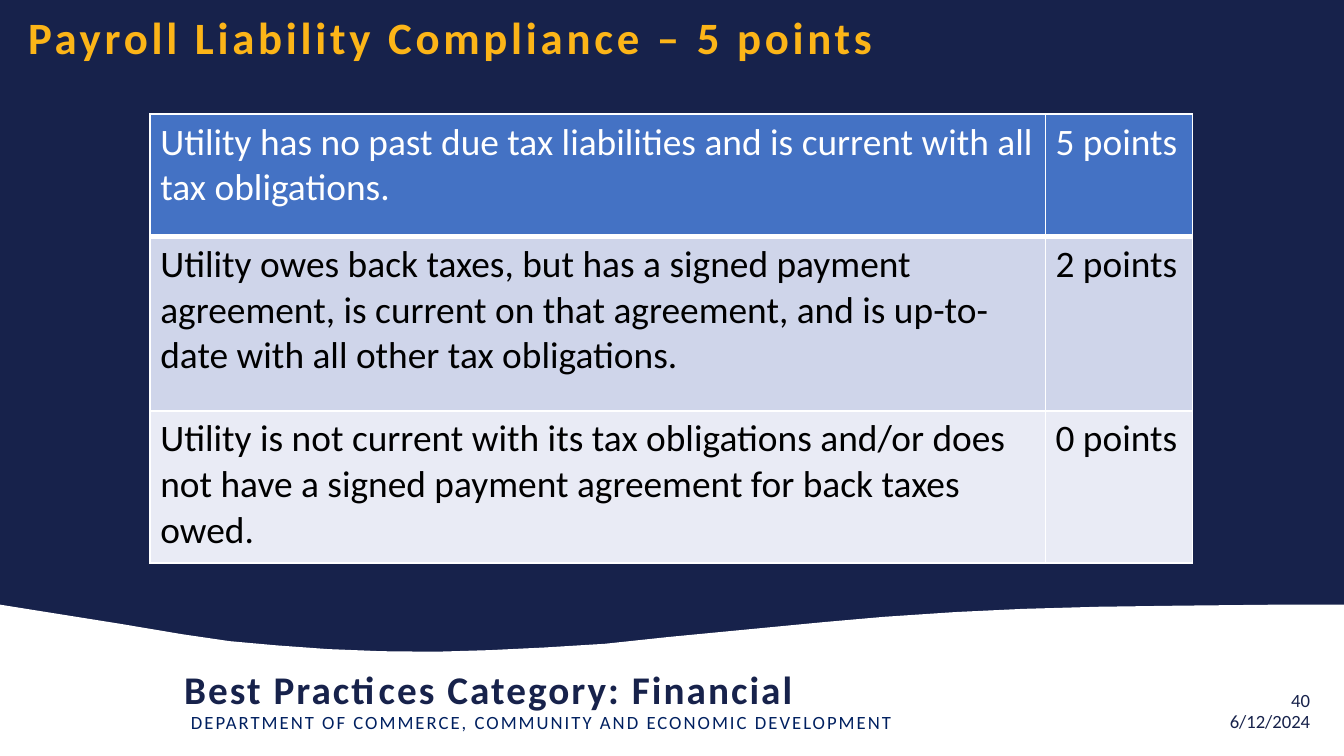
from pptx import Presentation
from pptx.dml.color import RGBColor
from pptx.enum import shapes, text
from pptx.oxml import parse_xml
from pptx.oxml.ns import nsdecls
from pptx.util import Cm, Pt

NAVY = RGBColor(0x17, 0x22, 0x4B)
DEEP_BLUE = RGBColor(0x00, 0x20, 0x60)
GOLD = RGBColor(0xFC, 0xB5, 0x18)
WHITE = RGBColor(0xFF, 0xFF, 0xFF)
BLACK = RGBColor(0x00, 0x00, 0x00)
HEADER_BLUE = RGBColor(0x44, 0x72, 0xC4)
BAND_DARK = RGBColor(0xCF, 0xD5, 0xEA)
BAND_LIGHT = RGBColor(0xE9, 0xEB, 0xF5)
FONT = "Calibri"
LEFT, RIGHT = text.PP_ALIGN.LEFT, text.PP_ALIGN.RIGHT

# Content; lengths in centimetres
WIDTH, HEIGHT = 25.4, 14.29
TITLE = "Payroll Liability Compliance – 5 points"
# text, (left, top, width, height), size, colour, bold, letter spacing, alignment
FOOTERS = [
    ("DEPARTMENT OF COMMERCE, COMMUNITY AND ECONOMIC DEVELOPMENT",
     (3.61, 13.44, 15.5, 0.43), 10, DEEP_BLUE, False, 1.1, LEFT),
    ("40", (18.92, 13.03, 5.84, 0.43), 10, NAVY, False, 0, RIGHT),
    ("Best Practices Category: Financial",
     (3.48, 12.57, 15.88, 0.89), 21, NAVY, True, 1.1, LEFT),
    ("6/12/2024", (22.63, 13.41, 2.13, 0.43), 10, NAVY, False, 0, RIGHT),
]
# description, points, row height, fill, font colour
SCORES = [
    ("Utility has no past due tax liabilities and is current with all tax obligations.",
     "5 points", 2.31, HEADER_BLUE, WHITE),
    ("Utility owes back taxes, but has a signed payment agreement, is current on that "
     "agreement, and is up-to-date with all other tax obligations.",
     "2 points", 3.3, BAND_DARK, BLACK),
    ("Utility is not current with its tax obligations and/or does not have a signed "
     "payment agreement for back taxes owed.",
     "0 points", 2.87, BAND_LIGHT, BLACK),
]
COLUMNS = [16.92, 2.78]
TABLE_LEFT, TABLE_TOP = 2.84, 2.16
WAVE = [
    (0, 11.43), (2.26, 11.79), (3.45, 11.99), (4.34, 12.12), (5.23, 12.2),
    (6.2, 12.27), (7.21, 12.31), (8.23, 12.32), (9.25, 12.29), (10.29, 12.24),
    (11.43, 12.17), (12.65, 12.04), (15.57, 11.76), (16.71, 11.66),
    (18.06, 11.57), (19.33, 11.51), (20.75, 11.47), (22.3, 11.45), (24.16, 11.43),
    (WIDTH, 11.43),
]


def format_text(frame, size, color, bold=False, spacing=0, alignment=LEFT):
    paragraph = frame.paragraphs[0]
    paragraph.alignment = alignment
    paragraph.line_spacing = 1.0
    for run in paragraph.runs:
        font = run.font
        font.name, font.size, font.bold = FONT, Pt(size), bold
        font.color.rgb = color
        if spacing:
            run._r.get_or_add_rPr().set("spc", str(round(spacing * 100)))


def clear_margins(frame):
    frame.margin_left = frame.margin_top = frame.margin_right = frame.margin_bottom = 0
    frame.vertical_anchor = text.MSO_ANCHOR.TOP
    frame.auto_size = text.MSO_AUTO_SIZE.NONE
    frame.word_wrap = True


def place(shape, box):
    shape.left, shape.top, shape.width, shape.height = map(Cm, box)


def paint(shape, color):
    shape.shadow.inherit = False
    shape.fill.solid()
    shape.fill.fore_color.rgb = color
    shape.line.fill.background()


def add_border(cell, side, points):
    cell._tc.get_or_add_tcPr().append(parse_xml(
        f'<a:ln{side} {nsdecls("a")} w="{Pt(points)}"><a:solidFill>'
        f'<a:srgbClr val="{WHITE}"/></a:solidFill></a:ln{side}>'))


presentation = Presentation()
presentation.slide_width, presentation.slide_height = Cm(WIDTH), Cm(HEIGHT)
slide = presentation.slides.add_slide(presentation.slide_layouts[5])
title = slide.shapes.title

# Navy backdrop and white wave, behind the title
backdrop = slide.shapes.add_shape(
    shapes.MSO_SHAPE.RECTANGLE, 0, 0, Cm(WIDTH), Cm(HEIGHT))
paint(backdrop, NAVY)
outline = [(Cm(x), Cm(y)) for x, y in WAVE + [(WIDTH, HEIGHT), (0, HEIGHT)]]
builder = slide.shapes.build_freeform(*outline[0])
builder.add_line_segments(outline[1:], close=True)
wave = builder.convert_to_shape()
paint(wave, WHITE)
title._element.addprevious(backdrop._element)
title._element.addprevious(wave._element)

# Title
place(title, (0.53, 0.18, 17.68, 2.06))
title.text_frame.text = TITLE
clear_margins(title.text_frame)
format_text(title.text_frame, 24, GOLD, True, 2)

# Footer texts
for words, box, *style in FOOTERS:
    footer = slide.shapes.add_textbox(*map(Cm, box))
    footer.text_frame.text = words
    clear_margins(footer.text_frame)
    format_text(footer.text_frame, *style)

# Score table
table = slide.shapes.add_table(
    len(SCORES), len(COLUMNS), Cm(TABLE_LEFT), Cm(TABLE_TOP),
    Cm(sum(COLUMNS)), Cm(sum(score[2] for score in SCORES))).table
for column, width in zip(table.columns, COLUMNS):
    column.width = Cm(width)
for index, (description, points, height, fill, color) in enumerate(SCORES):
    table.rows[index].height = Cm(height)
    borders = {"L": 1, "R": 1, "T": 3 if index == 1 else 1, "B": 3 if index == 0 else 1}
    for cell, words in zip(table.rows[index].cells, (description, points)):
        cell.margin_left = cell.margin_right = Cm(0.19)
        cell.margin_top = cell.margin_bottom = Cm(0.1)
        for side, line_width in borders.items():
            add_border(cell, side, line_width)
        cell.fill.solid()
        cell.fill.fore_color.rgb = fill
        cell.text_frame.text = words
        format_text(cell.text_frame, 20, color)

presentation.save("out.pptx")
